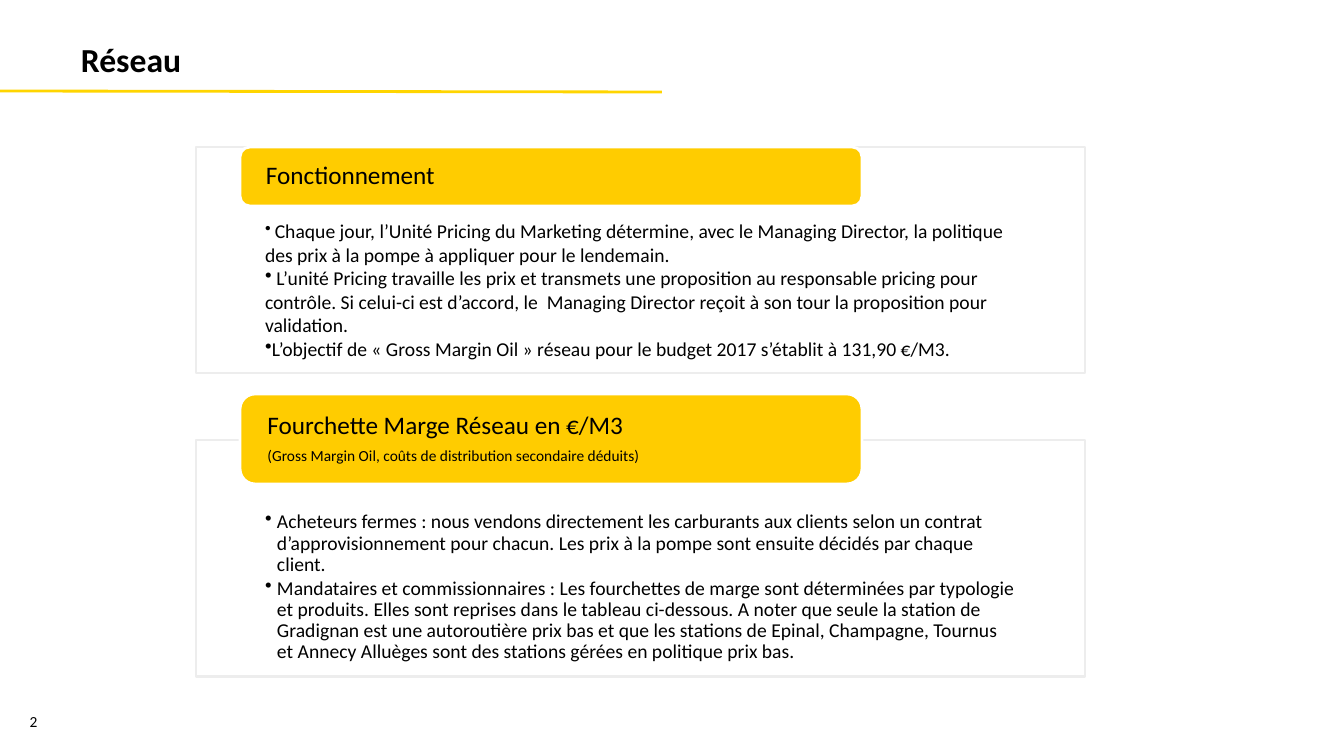
from lxml.etree import SubElement
from pptx import Presentation
from pptx.dml.color import RGBColor
from pptx.enum.shapes import MSO_CONNECTOR, MSO_SHAPE
from pptx.enum.text import MSO_ANCHOR, PP_ALIGN
from pptx.oxml.ns import qn
from pptx.util import Emu, Pt

TITLE = "Réseau"
NUMBER = "2"
# Each paragraph is a list of runs: (text, size)
PANELS = [
    {
        "top": 147, "height": 226, "tab_top": 147, "tab_height": 59,
        "head": [[("Fonctionnement", 18)]],
        "body": [
            [(" ", 12),
             ("Chaque jour, l’Unité Pricing du Marketing détermine, avec le Managing Director, "
              "la politique des prix à la pompe à appliquer pour le lendemain.", 14)],
            [(" L’unité Pricing travaille les prix et transmets une proposition au responsable "
              "pricing pour contrôle. Si celui-ci est d’accord, le  Managing Director reçoit à "
              "son tour la proposition pour validation.", 14)],
            [("L’objectif de « Gross Margin Oil » réseau pour le budget 2017 s’établit à "
              "131,90 €/M3.", 14)],
        ],
        "hang": 0, "line": 1.0, "gap": 0,
    },
    {
        "top": 440, "height": 237, "tab_top": 394, "tab_height": 90,
        "head": [
            [("Fourchette Marge Réseau en €/M3", 18)],
            [("(Gross Margin Oil, coûts de distribution secondaire déduits)", 11)],
        ],
        "body": [
            [("Acheteurs fermes : nous vendons directement les carburants aux clients selon un "
              "contrat d’approvisionnement pour chacun. Les prix à la pompe sont ensuite décidés "
              "par chaque client.", 14)],
            [("Mandataires et commissionnaires : Les fourchettes de marge sont déterminées par "
              "typologie et produits. Elles sont reprises dans le tableau ci-dessous. A noter que "
              "seule la station de Gradignan est une autoroutière prix bas et que les stations de "
              "Epinal, Champagne, Tournus et Annecy Alluèges sont des stations gérées en politique "
              "prix bas.", 14)],
        ],
        "hang": 12, "line": 0.9, "gap": 2,
    },
]
PANEL_X, PANEL_W = 196, 889
TAB_X, TAB_W = 240, 622

FONT = "Calibri"
BLACK = RGBColor(0, 0, 0)
WHITE = RGBColor(255, 255, 255)
GREY = RGBColor(0xED, 0xED, 0xED)
GOLD = RGBColor(0xFF, 0xCC, 0x00)
YELLOW = RGBColor(0xFF, 0xD5, 0x00)


def px(n):
    return Emu(round(n * 914400 / 100.8))


def set_font(font, size):
    font.name, font.size, font.color.rgb = FONT, Pt(size), BLACK


def add_bullet(para, hang):
    props = para._p.get_or_add_pPr()
    props.set("marL", str(px(hang)))
    props.set("indent", str(-px(hang)))
    SubElement(props, qn("a:buChar")).set("char", "•")


def write(frame, paras, line, gap, hang=None):
    for i, runs in enumerate(paras):
        para = frame.add_paragraph() if i else frame.paragraphs[0]
        para.alignment = PP_ALIGN.LEFT
        para.line_spacing = line
        para.space_before = Pt(0)
        para.space_after = Pt(gap if i < len(paras) - 1 else 0)
        if hang is not None:
            add_bullet(para, hang)
        set_font(para.font, runs[-1][1])
        for text, size in runs:
            run = para.add_run()
            run.text = text
            if size != runs[-1][1]:
                run.font.size = Pt(size)


def add_box(kind, area, fill, edge, pads, anchor):
    box = slide.shapes.add_shape(kind, *map(px, area))
    box.shadow.inherit = False
    box.fill.solid()
    box.fill.fore_color.rgb = fill
    box.line.color.rgb = edge
    box.line.width = Pt(2)
    frame = box.text_frame
    frame.word_wrap = True
    frame.vertical_anchor = anchor
    (frame.margin_left, frame.margin_top,
     frame.margin_right, frame.margin_bottom) = map(px, pads)
    return box


def add_label(area, text, size, anchor):
    frame = slide.shapes.add_textbox(*map(px, area)).text_frame
    frame.word_wrap = True
    frame.vertical_anchor = anchor
    para = frame.paragraphs[0]
    para.text = text
    set_font(para.font, size)
    return para


deck = Presentation()
deck.slide_width, deck.slide_height = px(1344), px(756)
slide = deck.slides.add_slide(deck.slide_layouts[6])

# Title and its rule
rule = slide.shapes.add_connector(MSO_CONNECTOR.STRAIGHT, px(0), px(91), px(662), px(92))
rule.line.color.rgb = YELLOW
rule.line.width = Pt(2)
SubElement(rule._element.spPr, qn("a:effectLst"))
title = add_label((71, 19, 1116, 86), TITLE, 24, MSO_ANCHOR.MIDDLE)
title.line_spacing = Pt(24)
title.font.bold = True

# Slide number
number = add_label((0, 700, 67, 36), NUMBER, 11, MSO_ANCHOR.BOTTOM)
number.alignment = PP_ALIGN.CENTER

# Panels, each with a heading tab on top
for panel in PANELS:
    box = add_box(MSO_SHAPE.RECTANGLE, (PANEL_X, panel["top"], PANEL_W, panel["height"]),
                  WHITE, GREY, (69, 72, 69, 10), MSO_ANCHOR.TOP)
    tint = box.fill._xPr.find(qn("a:solidFill"))[0]
    SubElement(tint, qn("a:alpha")).set("val", "90000")
    write(box.text_frame, panel["body"], panel["line"], panel["gap"], panel["hang"])

    tab = add_box(MSO_SHAPE.ROUNDED_RECTANGLE,
                  (TAB_X, panel["tab_top"], TAB_W, panel["tab_height"]),
                  GOLD, WHITE, (23, 0, 23, 0), MSO_ANCHOR.MIDDLE)
    write(tab.text_frame, panel["head"], 0.9, 6)

deck.save("out.pptx")
